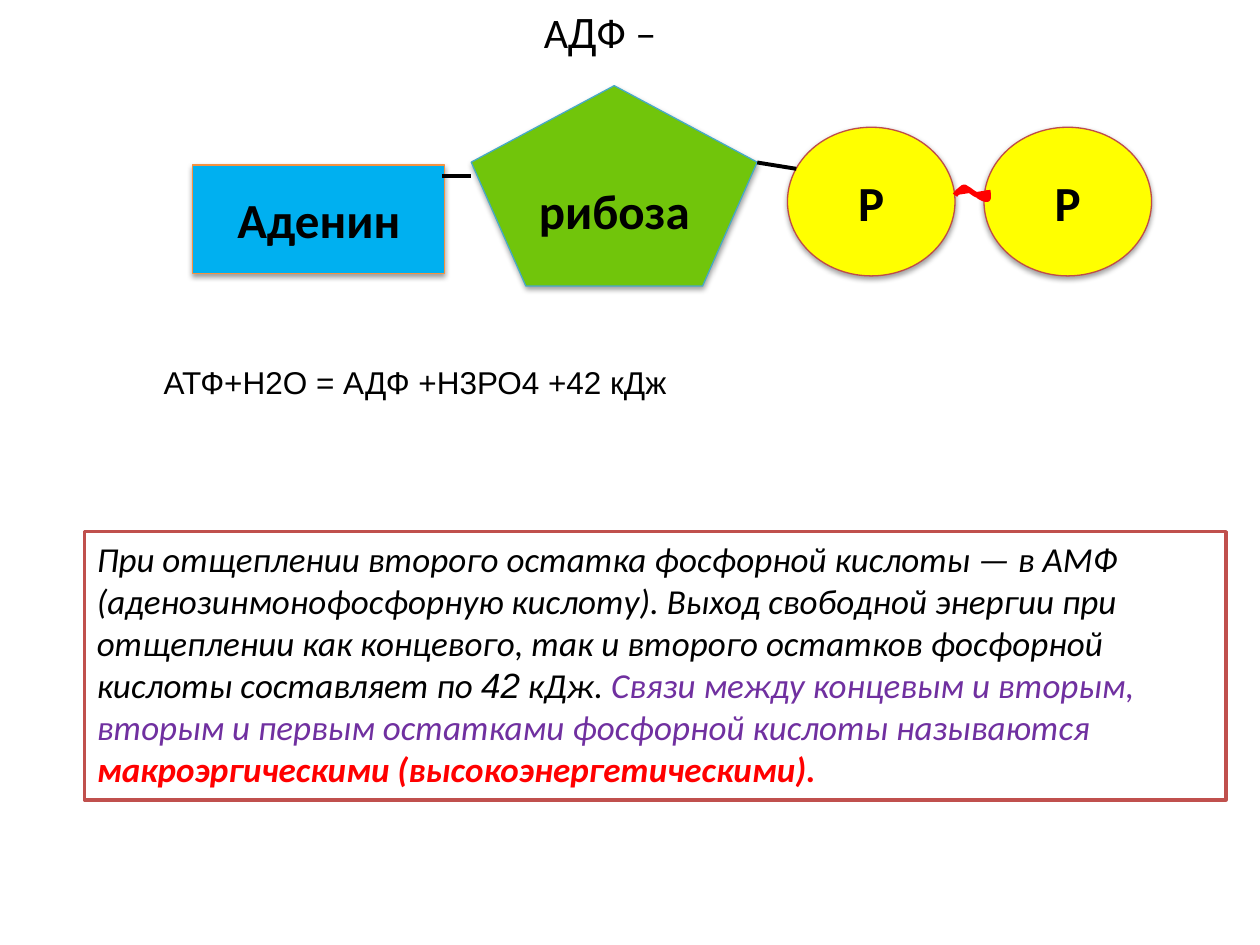
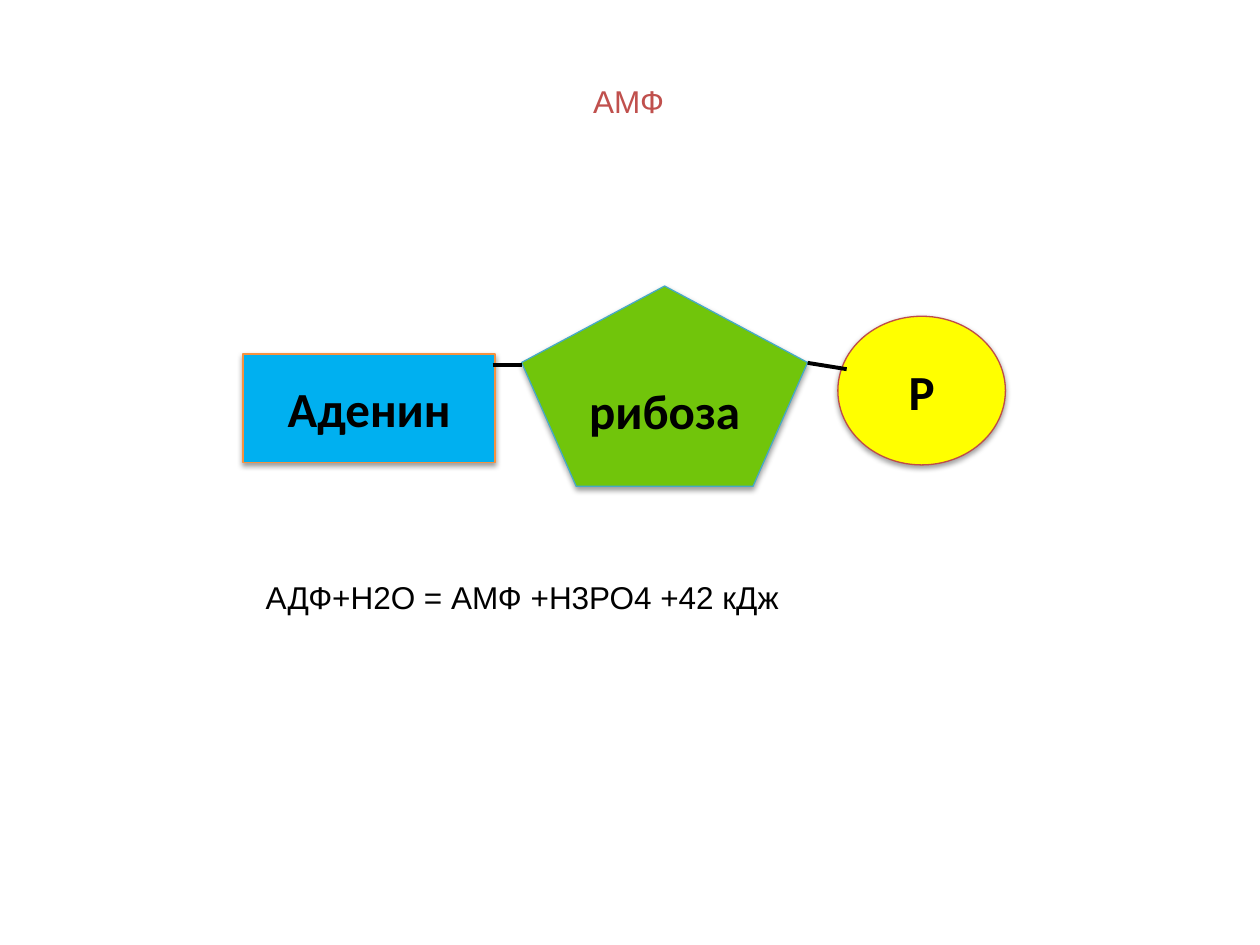
from lxml.etree import SubElement
from pptx import Presentation
from pptx.dml.color import RGBColor
from pptx.enum.shapes import MSO_CONNECTOR, MSO_SHAPE
from pptx.enum.text import MSO_ANCHOR, MSO_AUTO_SIZE, PP_ALIGN
from pptx.oxml.ns import qn
from pptx.util import Inches, Pt

COLORS = {
    "black": "000000", "white": "FFFFFF", "red": "FF0000", "purple": "7030A0",
    "brick": "C0504D", "adenine": "00B0F0", "adenine_line": "F69240",
    "ribose": "71C50B", "ribose_line": "46AAC5",
    "phosphate": "FFFF00", "phosphate_line": "BF4C48",
}
PHOSPHATE_STEP = 1.56


def rgb(name):
    """Return the named colour."""
    return RGBColor.from_string(COLORS[name])


def add_run(p, text, size=18, font="Calibri", color="black", bold=False, italic=False):
    """Append one formatted run to a paragraph."""
    r = p.add_run()
    r.text = text
    f = r.font
    f.size, f.name, f.bold, f.italic = Pt(size), font, bold, italic
    f.color.rgb = rgb(color)


def add_text(s, box, runs, align=PP_ALIGN.LEFT, wrap=False, **fmt):
    """Add a text box from (text, format) runs that share a base format."""
    tf = s.shapes.add_textbox(*map(Inches, box)).text_frame
    tf.word_wrap = wrap
    tf.auto_size = MSO_AUTO_SIZE.SHAPE_TO_FIT_TEXT
    p = tf.paragraphs[0]
    p.alignment = align
    for text, own in runs:
        add_run(p, text, **{**fmt, **own})


def paint(sp, fill, line, width):
    """Set fill and outline and drop the theme shadow."""
    sp.shadow.inherit = False
    sp.fill.solid()
    sp.fill.fore_color.rgb = rgb(fill)
    sp.line.color.rgb = rgb(line)
    sp.line.width = Pt(width)


def add_shadow(sp):
    """Give a shape a soft shadow straight below it."""
    effects = sp._element.spPr.find(qn("a:effectLst"))
    shadow = SubElement(effects, qn("a:outerShdw"), blurRad="40000", dist="20000",
                        dir="5400000", rotWithShape="0")
    color = SubElement(shadow, qn("a:srgbClr"), val=COLORS["black"])
    SubElement(color, qn("a:alpha"), val="38000")


def add_part(s, kind, box, text, name):
    """Add one labelled part of a molecule."""
    sp = s.shapes.add_shape(kind, *map(Inches, box))
    paint(sp, name, name + "_line", 0.75)
    add_shadow(sp)
    tf = sp.text_frame
    tf.word_wrap = True
    tf.vertical_anchor = MSO_ANCHOR.MIDDLE
    p = tf.paragraphs[0]
    p.alignment = PP_ALIGN.CENTER
    add_run(p, text, size=28, bold=True)


def add_bond(s, start, end):
    """Draw a plain bond between two points."""
    c = s.shapes.add_connector(MSO_CONNECTOR.STRAIGHT, *map(Inches, start + end))
    c.line.color.rgb = rgb("black")
    c.line.width = Pt(2.25)
    SubElement(c._element.spPr, qn("a:effectLst"))


def curve_points(start, curves, steps=8):
    """Sample a chain of cubic curves, leaving out the start point."""
    points = []
    for a, b, end in curves:
        for i in range(1, steps + 1):
            t = i / steps
            u = 1 - t
            points.append(tuple(
                Inches(u**3 * p0 + 3 * u * u * t * p1 + 3 * u * t * t * p2 + t**3 * p3)
                for p0, p1, p2, p3 in zip(start, a, b, end)))
        start = end
    return points


def add_energy_bond(s):
    """Draw the wavy high-energy bond."""
    start = (7.58, 1.55)
    curves = [
        ((7.6, 1.52), (7.63, 1.5), (7.64, 1.49)),
        ((7.66, 1.48), (7.66, 1.49), (7.68, 1.5)),
        ((7.7, 1.51), (7.73, 1.54), (7.76, 1.55)),
        ((7.78, 1.57), (7.83, 1.59), (7.84, 1.58)),
        ((7.85, 1.57), (7.84, 1.51), (7.84, 1.51)),
    ]
    fb = s.shapes.build_freeform(*map(Inches, start))
    fb.add_line_segments(curve_points(start, curves), close=False)
    paint(fb.convert_to_shape(), "red", "red", 3)


def add_molecule(s, x, y, ribose_y, phosphates):
    """Draw adenine at (x, y), ribose and a row of phosphates."""
    add_part(s, MSO_SHAPE.RECTANGLE, (x, y, 2, 0.86), "Аденин", "adenine")
    add_part(s, MSO_SHAPE.REGULAR_PENTAGON, (x + 2.21, ribose_y, 2.27, 1.59),
             "рибоза", "ribose")
    for i in range(phosphates):
        add_part(s, MSO_SHAPE.OVAL, (x + 4.72 + i * PHOSPHATE_STEP, y - 0.3, 1.33, 1.18),
                 "Р", "phosphate")
    add_bond(s, (x + 1.98, y + 0.09), (x + 2.21, y + 0.09))
    add_bond(s, (x + 4.79, ribose_y + 0.66), (x + 4.48, ribose_y + 0.61))


def add_note(s, box, runs, **fmt):
    """Add a framed paragraph of formatted runs."""
    sp = s.shapes.add_shape(MSO_SHAPE.RECTANGLE, *map(Inches, box))
    paint(sp, "white", "brick", 2)
    tf = sp.text_frame
    tf.word_wrap = True
    tf.vertical_anchor = MSO_ANCHOR.TOP
    p = tf.paragraphs[0]
    p.alignment = PP_ALIGN.LEFT
    for text, own in runs:
        add_run(p, text, **{**fmt, **own})


def build_adp(s):
    """Build the slide on ADP."""
    add_note(s, (0.67, 4.22, 9.06, 2.13), [
        ("При отщеплении второго остатка фосфорной кислоты — в АМФ "
         "(аденозинмонофосфорную кислоту). Выход свободной энергии при отщеплении "
         "как концевого, так и второго остатков фосфорной кислоты составляет по ", {}),
        ("42", {"font": "Arial"}),
        (" кДж. ", {}),
        ("Связи между концевым и вторым, вторым и первым остатками фосфорной "
         "кислоты называются ", {"color": "purple"}),
        ("макроэргическими (высокоэнергетическими).", {"color": "red", "bold": True}),
    ], size=20, italic=True)
    add_molecule(s, 1.53, 1.31, 0.68, phosphates=2)
    add_energy_bond(s)
    add_text(s, (0, 0, 9.6, 0.9), [("А", {}), ("Д", {"font": "Arial"}), ("Ф – ", {})],
             align=PP_ALIGN.CENTER, wrap=True, size=24)
    add_text(s, (1.2, 2.83, 4.22, 0.4), [("АТФ+Н2О = АДФ +Н3РО4 +42 кДж", {})], font="Arial")


def build_amp(s):
    """Build the slide on AMP."""
    add_molecule(s, 1.93, 2.81, 2.27, phosphates=1)
    add_text(s, (2.01, 4.54, 4.28, 0.4), [("АДФ+Н2О = АМФ +Н3РО4 +42 кДж", {})], font="Arial")
    add_text(s, (4.61, 0.6, 0.77, 0.4), [("АМФ", {})], font="Arial", color="brick")


def main():
    """Build and save the presentation."""
    prs = Presentation()
    prs.slide_width, prs.slide_height = Inches(10), Inches(7.5)
    for build in (build_adp, build_amp):
        build(prs.slides.add_slide(prs.slide_layouts[6]))
    prs.save("out.pptx")


if __name__ == "__main__":
    main()
